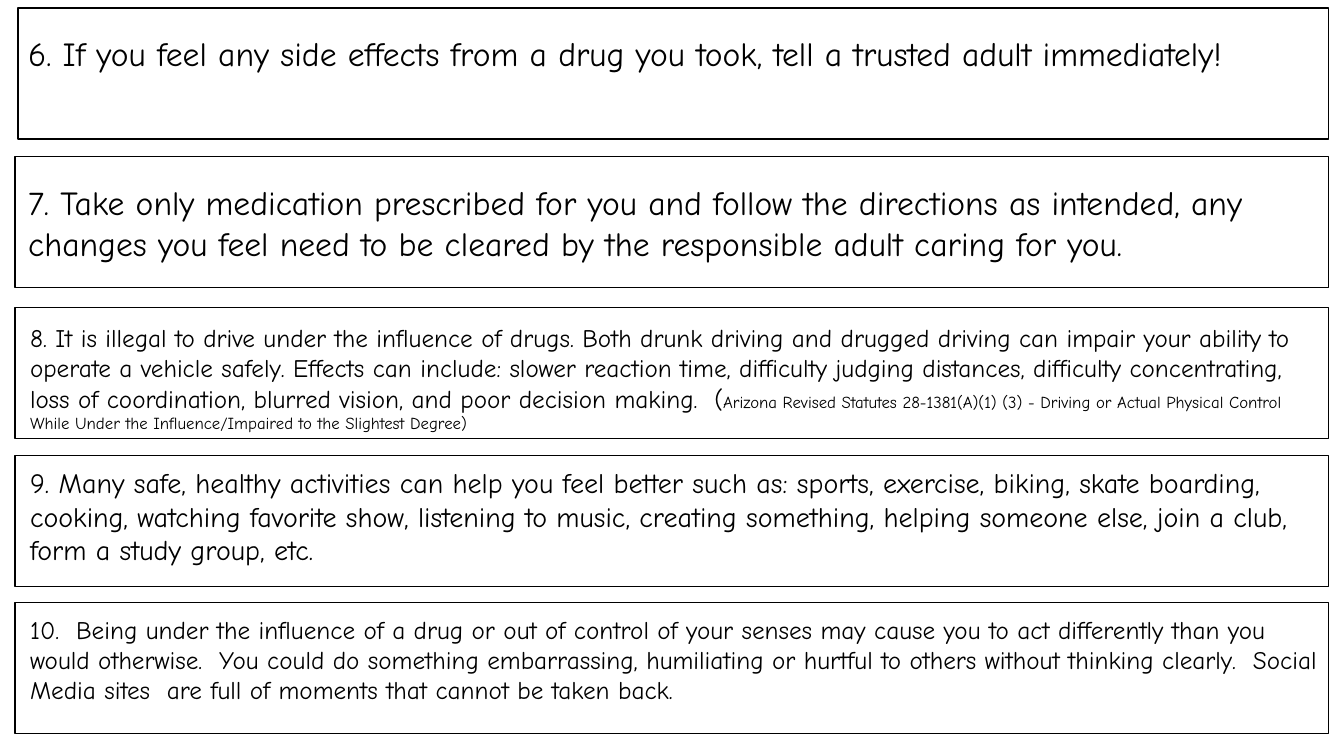
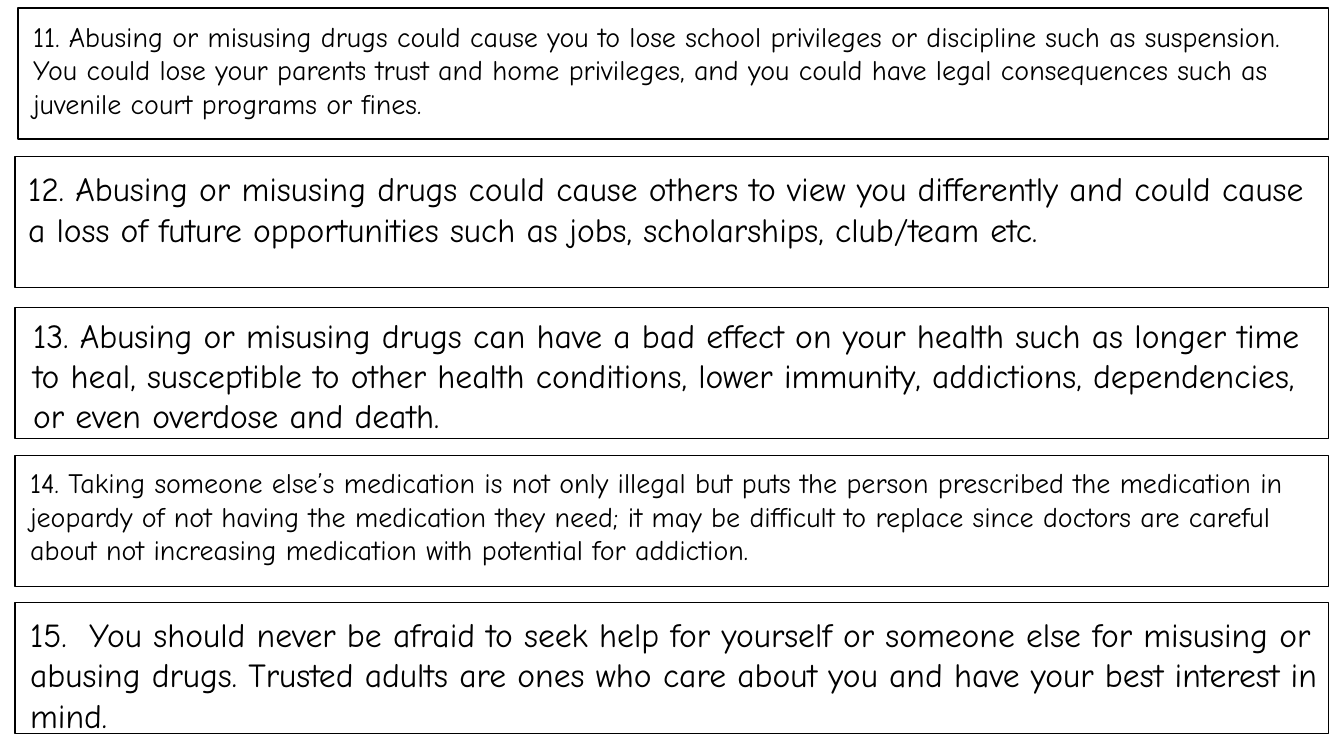
from dataclasses import dataclass

from pptx import Presentation
from pptx.dml.color import RGBColor
from pptx.enum.shapes import MSO_SHAPE as SHAPE
from pptx.enum.text import MSO_AUTO_SIZE as AUTO, MSO_ANCHOR as ANCHOR
from pptx.util import Inches, Pt

FONT = "Comic Neue"
INK, PAPER = "000000", "FFFFFF"
BLANK_LAYOUT = 6

RIGHT, BOX_H = 13.18, 1.3
# Left and top of the five boxes on every slide
BOXES = [(0.18, 0.08), (0.15, 1.55), (0.15, 3.05), (0.15, 4.52), (0.15, 5.98)]


@dataclass
class Rule:
    """Text of one box; dx and dy are its offset from the box corner."""
    text: str
    size: int
    dx: float
    dy: float
    width: float
    height: float
    citation: str = ""


SLIDES = [
    [
        Rule("6. If you feel any side effects from a drug you took, tell a "
             "trusted adult immediately!", 24, 0, 0.2, 12.88, 0.91),
        Rule("7. Take only medication prescribed for you and follow the "
             "directions as intended, any changes you feel need to be cleared "
             "by the responsible adult caring for you.",
             24, 0.03, 0.21, 12.88, 0.91),
        Rule("8. It is illegal to drive under the influence of drugs. Both "
             "drunk driving and drugged driving can impair your ability to "
             "operate a vehicle safely. Effects can include: slower reaction "
             "time, difficulty judging distances, difficulty concentrating, "
             "loss of coordination, blurred vision, and poor decision "
             "making.  (", 18, 0.05, 0.1, 13.03, 1.21,
             "Arizona Revised Statutes 28-1381(A)(1) (3) - Driving or Actual "
             "Physical Control While Under the Influence/Impaired to the "
             "Slightest Degree)"),
        Rule("9. Many safe, healthy activities can help you feel better such "
             "as: sports, exercise, biking, skate boarding, cooking, watching "
             "favorite show, listening to music, creating something, helping "
             "someone else, join a club, form a study group, etc.",
             20, 0.05, 0.05, 13.13, 1.11),
        Rule("10.  Being under the influence of a drug or out of control of "
             "your senses may cause you to act differently than you would "
             "otherwise.  You could do something embarrassing, humiliating or "
             "hurtful to others without thinking clearly.  Social Media sites "
             " are full of moments that cannot be taken back.",
             18, 0.05, 0.06, 12.98, 1.01),
    ],
    [
        Rule("11. Abusing or misusing drugs could cause you to lose school "
             "privileges or discipline such as suspension.  You could lose "
             "your parents trust and home privileges, and you could have "
             "legal consequences such as juvenile court programs or fines.",
             20, 0.05, 0.06, 12.88, 1.11),
        Rule("12. Abusing or misusing drugs could cause others to view you "
             "differently and could cause a loss of future opportunities such "
             "as jobs, scholarships, club/team etc.",
             24, 0.03, 0.07, 12.88, 1.31),
        Rule("13. Abusing or misusing drugs can have a bad effect on your "
             "health such as longer time to heal, susceptible to other health "
             "conditions, lower immunity, addictions, dependencies, or even "
             "overdose and death.", 24, 0.08, 0.02, 13.03, 1.31),
        Rule("14. Taking someone else’s medication is not only illegal but "
             "puts the person prescribed the medication in jeopardy of not "
             "having the medication they need; it may be difficult to replace "
             "since doctors are careful about not increasing medication with "
             "potential for addiction.", 20, 0.05, 0.05, 13.13, 1.11),
        Rule("15.  You should never be afraid to seek help for yourself or "
             "someone else for misusing or abusing drugs. Trusted adults are "
             "ones who care about you and have your best interest in mind.",
             24, 0.05, 0.06, 12.98, 1.31),
    ],
]


def rgb(color):
    return RGBColor.from_string(color)


def add_frame(s, left, top):
    frame = s.shapes.add_shape(SHAPE.RECTANGLE, Inches(left), Inches(top),
                               Inches(RIGHT - left), Inches(BOX_H))
    frame.shadow.inherit = False
    frame.fill.solid()
    frame.fill.fore_color.rgb = rgb(PAPER)
    frame.line.color.rgb = rgb(INK)
    frame.line.width = Pt(1)


def add_rule(s, left, top, rule):
    box = s.shapes.add_textbox(Inches(left + rule.dx), Inches(top + rule.dy),
                               Inches(rule.width), Inches(rule.height))
    tf = box.text_frame
    tf.word_wrap = True
    tf.auto_size = AUTO.SHAPE_TO_FIT_TEXT
    tf.vertical_anchor = ANCHOR.TOP
    p = tf.paragraphs[0]
    p.font.name = FONT
    p.font.color.rgb = rgb(INK)
    for text, size in ((rule.text, rule.size), (rule.citation, 12)):
        if text:
            r = p.add_run()
            r.text = text
            r.font.size = Pt(size)


def add_rules_slide(prs, rules):
    s = prs.slides.add_slide(prs.slide_layouts[BLANK_LAYOUT])
    for (left, top), rule in zip(BOXES, rules):
        add_frame(s, left, top)
        add_rule(s, left, top, rule)


def main():
    prs = Presentation()
    prs.slide_width, prs.slide_height = Inches(13.33), Inches(7.5)
    for rules in SLIDES:
        add_rules_slide(prs, rules)
    prs.save("out.pptx")


if __name__ == "__main__":
    main()
